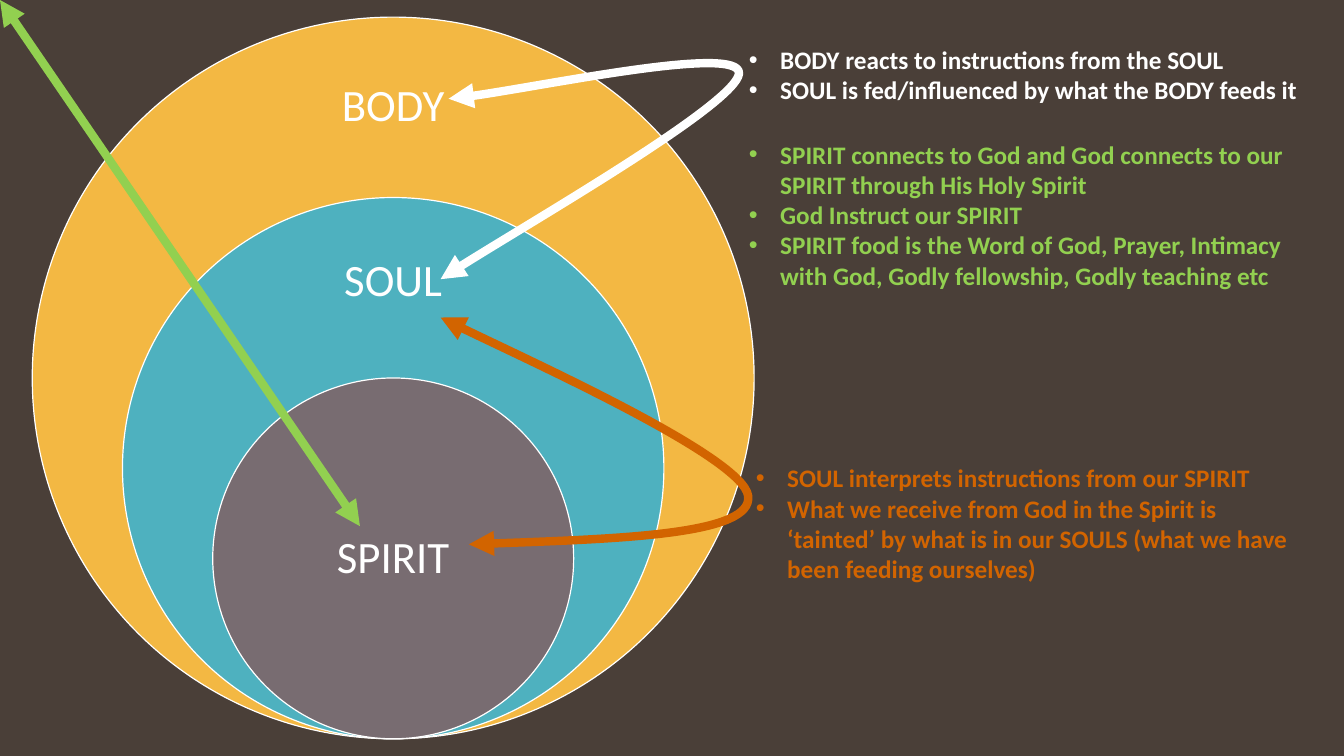
from dataclasses import dataclass

from lxml import etree
from pptx import Presentation
from pptx.dml.color import RGBColor
from pptx.enum.shapes import MSO_CONNECTOR, MSO_SHAPE
from pptx.enum.text import MSO_ANCHOR, MSO_AUTO_SIZE, PP_ALIGN
from pptx.oxml.ns import qn
from pptx.util import Inches, Pt

ELLIPSE = MSO_SHAPE.OVAL
STRAIGHT = MSO_CONNECTOR.STRAIGHT
MIDDLE = MSO_ANCHOR.MIDDLE
CENTER = PP_ALIGN.CENTER
GROW = MSO_AUTO_SIZE.SHAPE_TO_FIT_TEXT

FONT = "Calibri"
COLORS = {
    "background": "4A3F38",
    "body": "F3B843",
    "soul": "4EB1BF",
    "spirit": "786C71",
    "white": "FFFFFF",
    "green": "92D050",
    "orange": "D26400",
}
CENTER_X = 3.9
CIRCLE_BOTTOM = 7.33
LABEL_WIDTH = 2.53
BULLET_INDENT = 0.31

Point = tuple[float, float]


@dataclass
class Circle:
    label: str
    color: str
    diameter: float
    label_top: float
    label_height: float


@dataclass
class Notes:
    left: float
    top: float
    width: float
    height: float
    color: str
    wrap: bool
    lines: list[str]


@dataclass
class CurvedArrow:
    color: str
    start: Point
    curves: list[tuple[Point, Point, Point]]


CIRCLES = [
    Circle("BODY", "body", 7.16, 0.53, 1.07),
    Circle("SOUL", "soul", 5.37, 2.29, 1.01),
    Circle("SPIRIT", "spirit", 3.58, 4.65, 1.79),
]
NOTES = [
    Notes(7.33, 0.39, 5.93, 0.71, "white", False, [
        "BODY reacts to instructions from the SOUL",
        "SOUL is fed/influenced by what the BODY feeds it",
    ]),
    Notes(7.33, 1.33, 5.71, 1.92, "green", True, [
        "SPIRIT connects to God and God connects to our SPIRIT through His Holy Spirit",
        "God Instruct our SPIRIT",
        "SPIRIT food is the Word of God, Prayer, Intimacy with God, "
        "Godly fellowship, Godly teaching etc",
    ]),
    Notes(7.4, 4.54, 5.64, 1.31, "orange", True, [
        "SOUL interprets instructions from our SPIRIT",
        "What we receive from God in the Spirit is ‘tainted’ by what is in our SOULS "
        "(what we have been feeding ourselves)",
    ]),
]
CURVED_ARROWS = [
    CurvedArrow("white", (4.45, 0.98), [
        ((4.98, 0.94), (7.35, 0.44), (7.33, 0.73)),
        ((7.3, 1.03), (4.87, 2.43), (4.37, 2.77)),
    ]),
    CurvedArrow("orange", (4.65, 5.4), [
        ((6.06, 5.35), (7.47, 5.3), (7.42, 4.92)),
        ((7.37, 4.54), (4.82, 3.38), (4.37, 3.15)),
    ]),
]


def rgb(name: str) -> RGBColor:
    return RGBColor.from_string(COLORS[name])


def style_font(paragraph, size: int, color: str, bold: bool = False) -> None:
    paragraph.font.name = FONT
    paragraph.font.size = Pt(size)
    paragraph.font.bold = bold
    paragraph.font.color.rgb = rgb(color)


def style_arrow(arrow, color: str) -> None:
    arrow.line.color.rgb = rgb(color)
    arrow.line.width = Pt(6)
    line = arrow.line._get_or_add_ln()
    for end in ("a:headEnd", "a:tailEnd"):
        etree.SubElement(line, qn(end), type="triangle")


def add_circle(slide, circle: Circle) -> None:
    size = Inches(circle.diameter)
    shape = slide.shapes.add_shape(
        ELLIPSE, Inches(CENTER_X - circle.diameter / 2),
        Inches(CIRCLE_BOTTOM - circle.diameter), size, size)
    shape.shadow.inherit = False
    shape.fill.solid()
    shape.fill.fore_color.rgb = rgb(circle.color)
    shape.line.color.rgb = rgb("white")
    shape.line.width = Pt(0.85)

    label = slide.shapes.add_textbox(
        Inches(CENTER_X - LABEL_WIDTH / 2), Inches(circle.label_top),
        Inches(LABEL_WIDTH), Inches(circle.label_height))
    frame = label.text_frame
    frame.word_wrap = True
    frame.vertical_anchor = MIDDLE
    frame.margin_left = frame.margin_right = Inches(0.25)
    frame.margin_top = frame.margin_bottom = Inches(0.25)
    paragraph = frame.paragraphs[0]
    paragraph.text = circle.label
    paragraph.alignment = CENTER
    paragraph.line_spacing = 0.9
    style_font(paragraph, 32, "white")


def add_notes(slide, notes: Notes) -> None:
    box = slide.shapes.add_textbox(
        Inches(notes.left), Inches(notes.top), Inches(notes.width), Inches(notes.height))
    frame = box.text_frame
    frame.word_wrap = notes.wrap
    frame.auto_size = GROW
    frame.text = "\n".join(notes.lines)
    for paragraph in frame.paragraphs:
        style_font(paragraph, 18, notes.color, bold=True)
        properties = paragraph._p.get_or_add_pPr()
        properties.set("marL", str(Inches(BULLET_INDENT)))
        properties.set("indent", str(-Inches(BULLET_INDENT)))
        bullet_font = etree.Element(qn("a:buFont"), typeface="Arial")
        bullet = etree.Element(qn("a:buChar"), char="•")
        properties.find(qn("a:defRPr")).addprevious(bullet_font)
        bullet_font.addnext(bullet)


def add_curved_arrow(slide, arrow: CurvedArrow) -> None:
    builder = slide.shapes.build_freeform(*map(Inches, arrow.start))
    builder.add_line_segments(
        [(Inches(x), Inches(y)) for *_, (x, y) in arrow.curves], close=False)
    shape = builder.convert_to_shape()
    shape.shadow.inherit = False
    shape.fill.background()
    segments = list(shape._element.iter(qn("a:lnTo")))
    for segment, curve in zip(segments, arrow.curves):
        bezier = etree.Element(qn("a:cubicBezTo"))
        for x, y in curve:
            etree.SubElement(bezier, qn("a:pt"), x=str(Inches(x) - shape.left),
                             y=str(Inches(y) - shape.top))
        segment.getparent().replace(segment, bezier)
    style_arrow(shape, arrow.color)


def add_straight_arrow(slide, start: Point, end: Point, color: str) -> None:
    connector = slide.shapes.add_connector(
        STRAIGHT, *map(Inches, start), *map(Inches, end))
    style_arrow(connector, color)
    etree.SubElement(connector._element.spPr, qn("a:effectLst"))


def main() -> None:
    presentation = Presentation()
    presentation.slide_width = Inches(13.33)
    presentation.slide_height = Inches(7.5)
    slide = presentation.slides.add_slide(presentation.slide_layouts[6])
    slide.background.fill.solid()
    slide.background.fill.fore_color.rgb = rgb("background")
    for circle in CIRCLES:
        add_circle(slide, circle)
    for notes in NOTES:
        add_notes(slide, notes)
    add_straight_arrow(slide, (3.57, 5.22), (0, 0), "green")
    for arrow in CURVED_ARROWS:
        add_curved_arrow(slide, arrow)
    presentation.save("out.pptx")


if __name__ == "__main__":
    main()
